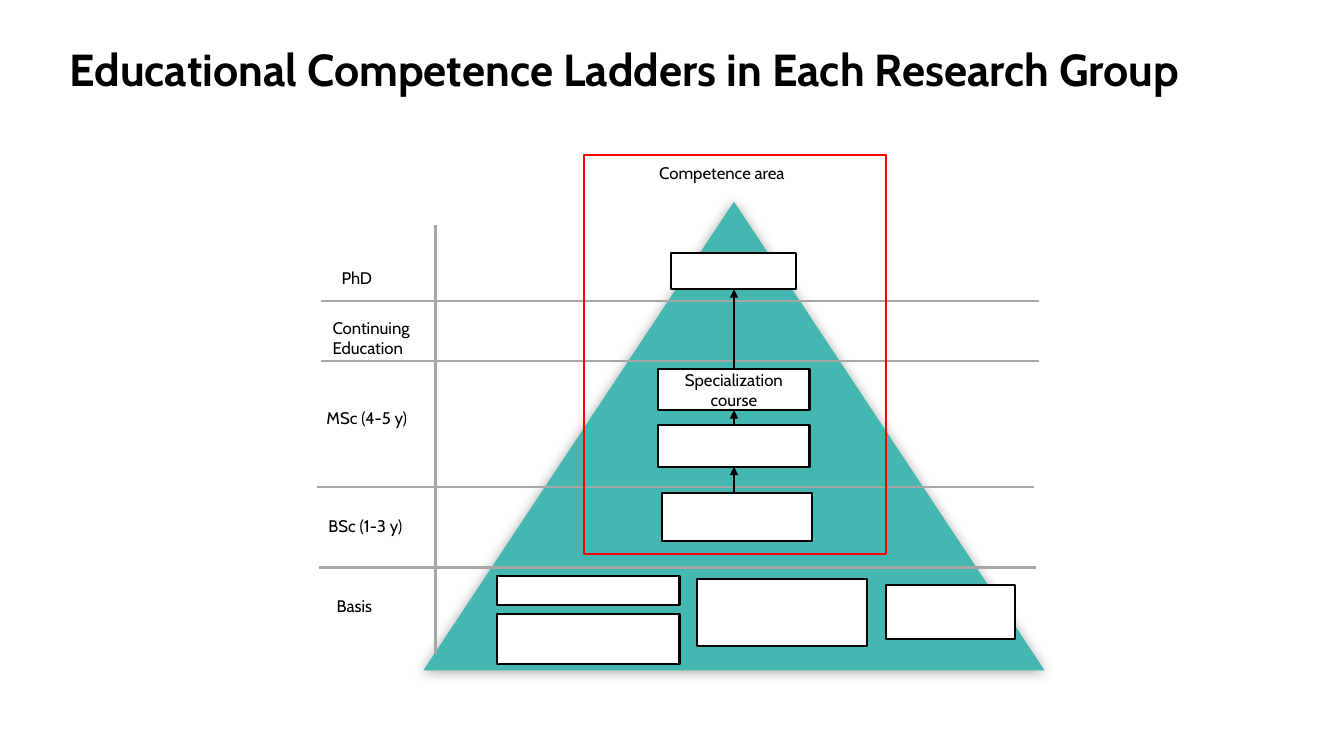
from lxml.etree import SubElement
from pptx import Presentation
from pptx.dml.color import RGBColor
from pptx.enum.shapes import MSO_CONNECTOR, MSO_SHAPE
from pptx.enum.text import MSO_ANCHOR, PP_ALIGN
from pptx.oxml.ns import qn
from pptx.util import Inches, Pt

COLOURS = {"ink": "000000", "paper": "FFFFFF", "pyramid": "43B7B0", "grid": "A6A6A6", "focus": "FF0000"}


class LadderSlide:
    """Holds the style and the current slide of the competence ladder."""

    font_name = "Cabin"
    line_width = Pt(1.5)

    def __init__(self, deck):
        self.page = deck.slides.add_slide(deck.slide_layouts[5])

    def colour(self, name):
        return RGBColor.from_string(COLOURS[name])

    def fill_text(self, frame, text, size=12, bold=False, align=PP_ALIGN.LEFT, anchor=MSO_ANCHOR.TOP):
        frame.word_wrap = True
        frame.vertical_anchor = anchor
        para = frame.paragraphs[0]
        para.text = text
        para.alignment = align
        para.font.name = self.font_name
        para.font.size = Pt(size)
        para.font.bold = bold
        para.font.color.rgb = self.colour("ink")

    def title(self, text, *place):
        box = self.page.shapes.title
        box.left, box.top, box.width, box.height = map(Inches, place)
        self.fill_text(box.text_frame, text, 32, True)

    def label(self, text, *place):
        box = self.page.shapes.add_textbox(*map(Inches, place))
        self.fill_text(box.text_frame, text)

    def shape(self, kind, place, fill=None, line=None):
        shape = self.page.shapes.add_shape(kind, *map(Inches, place))
        shape.shadow.inherit = False
        if fill:
            shape.fill.solid()
            shape.fill.fore_color.rgb = self.colour(fill)
        else:
            shape.fill.background()
        if line:
            shape.line.color.rgb = self.colour(line)
            shape.line.width = self.line_width
        else:
            shape.line.fill.background()
        return shape

    def pyramid(self, *place):
        shape = self.shape(MSO_SHAPE.ISOSCELES_TRIANGLE, place, "pyramid")
        effects = shape.element.spPr.find(qn("a:effectLst"))
        shadow = SubElement(effects, qn("a:outerShdw"), blurRad=str(Pt(9)), dist=str(Pt(1)),
                            dir="5400000", rotWithShape="0")
        tint = SubElement(shadow, qn("a:srgbClr"), val=COLOURS["ink"])
        SubElement(tint, qn("a:alpha"), val="35000")

    def course(self, place, text=""):
        box = self.shape(MSO_SHAPE.RECTANGLE, place, "paper", "ink")
        if text:
            self.fill_text(box.text_frame, text, align=PP_ALIGN.CENTER, anchor=MSO_ANCHOR.MIDDLE)

    def frame(self, *place):
        self.shape(MSO_SHAPE.RECTANGLE, place, line="focus")

    def line(self, *ends, colour="grid"):
        line = self.page.shapes.add_connector(MSO_CONNECTOR.STRAIGHT, *map(Inches, ends))
        line.line.color.rgb = self.colour(colour)
        line.line.width = self.line_width
        SubElement(line.element.spPr, qn("a:effectLst"))
        return line

    def arrow(self, x, start, end):
        arrow = self.line(x, start, x, end, colour="ink")
        SubElement(arrow.element.spPr.find(qn("a:ln")), qn("a:tailEnd"), type="triangle")


def main():
    deck = Presentation()
    deck.slide_width, deck.slide_height = Inches(13.33), Inches(7.5)
    ladder = LadderSlide(deck)
    ladder.title("Educational Competence Ladders in Each Research Group", 0.59, 0.36, 12.31, 0.64)
    ladder.pyramid(4.2, 2, 6.16, 4.65)

    ladder.line(4.32, 2.23, 4.32, 6.49)
    for left, y in ((3.18, 2.99), (3.18, 3.58), (3.14, 4.83), (3.16, 5.63)):
        ladder.line(left, y, left + 7.12, y)

    for text, left, top, width, height in (
        ("Competence area", 6.44, 1.57, 2.4, 0.3),
        ("PhD", 3.29, 2.61, 0.75, 0.3),
        ("Continuing Education", 3.2, 3.1, 1.26, 0.5),
        ("MSc (4-5 y)", 3.14, 4, 1.24, 0.3),
        ("BSc (1-3 y)", 3.16, 5.07, 1.16, 0.3),
        ("Basis", 3.24, 5.86, 0.75, 0.3),
    ):
        ladder.label(text, left, top, width, height)

    basis_courses = [(4.93, 5.71, 1.81, 0.29), (4.93, 6.09, 1.81, 0.5),
                     (6.91, 5.74, 1.69, 0.67), (8.79, 5.8, 1.28, 0.54)]
    for place in basis_courses:
        ladder.course(place)

    steps = [((6.66, 2.51, 1.24, 0.36), ""), ((6.53, 3.66, 1.5, 0.41), "Specialization course"),
             ((6.53, 4.22, 1.5, 0.41), ""), ((6.57, 4.89, 1.48, 0.48), "")]
    for place, text in steps:
        ladder.course(place, text)
    for (upper, _), (lower, _) in zip(steps, steps[1:]):
        ladder.arrow(7.28, lower[1], upper[1] + upper[3])

    ladder.frame(5.79, 1.54, 3, 3.96)
    deck.save("out.pptx")


if __name__ == "__main__":
    main()
